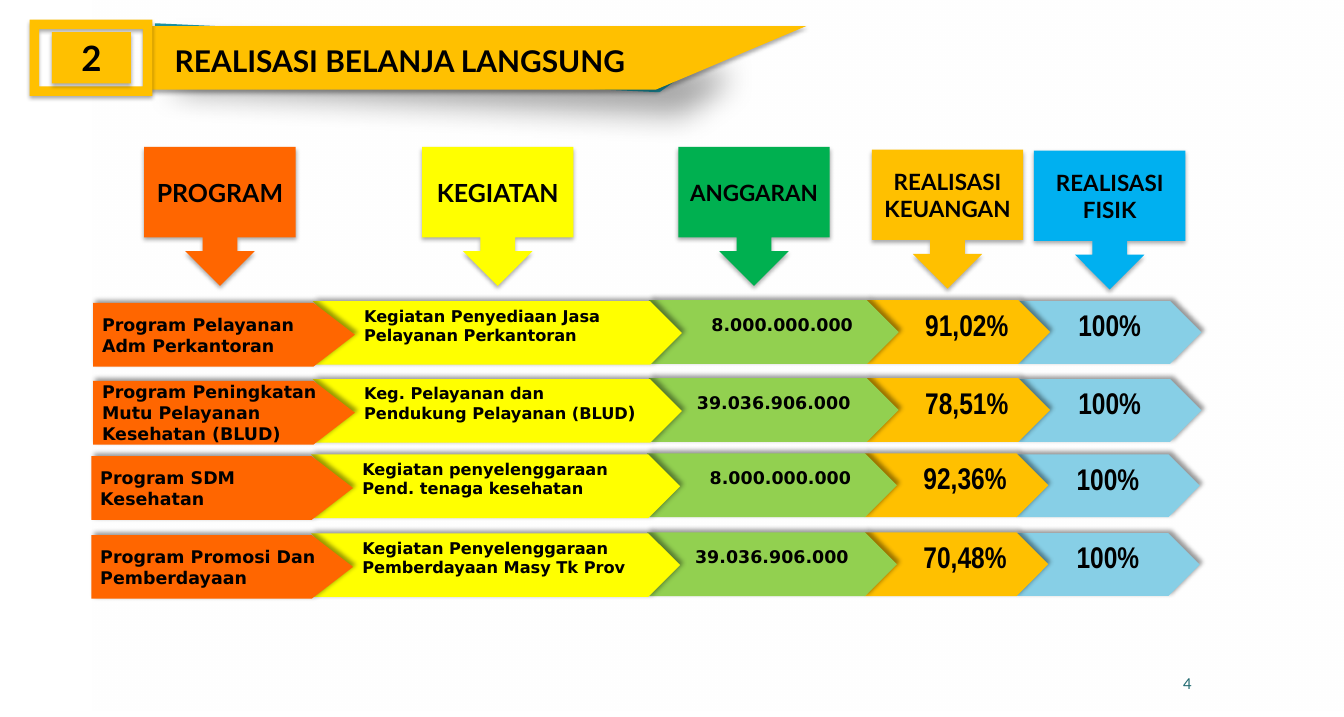
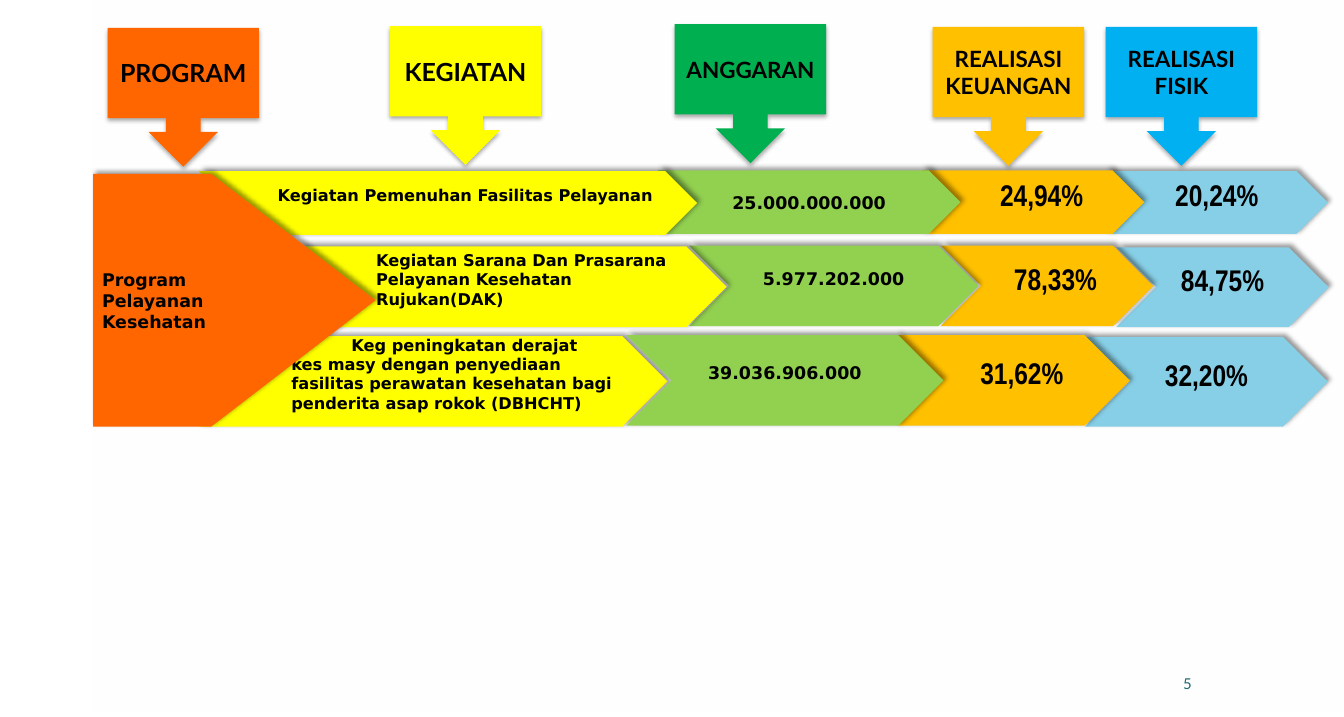
from lxml import etree
from pptx import Presentation, util as u
from pptx.dml.color import RGBColor
from pptx.enum import shapes as sh, text as tx
from pptx.oxml import ns

PX = 9144
HUE = {"orange": "FF6600", "yellow": "FFFF00", "green": "00B050", "lime": "92D050",
       "amber": "FFC000", "blue": "00B0F0", "sky": "87CFE6", "teal": "1B91A1",
       "page": "1F696F", "black": "000000", "white": "FFFFFF"}
FORM = sh.MSO_SHAPE
ALIGN = {"l": tx.PP_ALIGN.LEFT, "c": tx.PP_ALIGN.CENTER, "r": tx.PP_ALIGN.RIGHT}
SOFT = (32, 3.5, 2.2, 90)
EDGE = (40, 4, 3, 315)
DEEP = (35, 25, 25, 45)

KINDS = {"plan": (FORM.PENTAGON, "orange", "DejaVu Sans", 14, "l", 0),
         "task": (FORM.CHEVRON, "yellow", "DejaVu Sans", 13, "l", 12),
         "fund": (FORM.CHEVRON, "lime", "DejaVu Sans", 14, "c", 0),
         "paid": (FORM.CHEVRON, "amber", "Arial Narrow", 24, "c", 19),
         "done": (FORM.CHEVRON, "sky", "Arial Narrow", 24, "c", 0)}
HEADS = [("PROGRAM", "orange", 20), ("KEGIATAN", "yellow", 20), ("ANGGARAN", "green", 18),
         ("REALISASI KEUANGAN", "amber", 18), ("REALISASI FISIK", "blue", 18)]

COLS = {"done": (1034, 205), "paid": (865, 205), "fund": (622, 279),
        "task": (247, 412), "plan": (2, 292)}
ROWS = [
    (102, 335, {"plan": "Program Pelayanan Adm Perkantoran",
                "task": "Kegiatan Penyediaan Jasa Pelayanan Perkantoran",
                "fund": "8.000.000.000", "paid": "91,02%", "done": "100%"},
     {"fund": {"left": 19}}),
    (102, 422, {"plan": "Program Peningkatan Mutu Pelayanan Kesehatan (BLUD)",
                "task": "Keg. Pelayanan dan Pendukung Pelayanan (BLUD",
                "fund": "39.036.906.000", "paid": "78,51%", "done": "100%"},
     {"task": {"tail": ")"}}),
    (100, 506, {"plan": "Program SDM Kesehatan",
                "task": "Kegiatan penyelenggaraan Pend. tenaga kesehatan",
                "fund": "8.000.000.000", "paid": "92,36%", "done": "100%"},
     {"fund": {"left": 19}}),
    (100, 594, {"plan": "Program Promosi Dan Pemberdayaan",
                "task": "Kegiatan Penyelenggaraan Pemberdayaan Masy Tk Prov",
                "fund": "39.036.906.000", "paid": "70,48%", "done": "100%"}, {}),
]
BANDS = [
    (374, 101, [
        ("task", 222, 523, "Keg peningkatan derajat kes masy dengan penyediaan fasilitas "
         "perawatan kesehatan bagi penderita asap rokok (DBHCHT)", {"left": 43, "first": 67}),
        ("done", 1211, 271, "32,20%", {}),
        ("paid", 1001, 260, "31,62%", {}),
        ("fund", 699, 354, "39.036.906.000", {})]),
    (274, 90, [
        ("done", 1246, 237, "84,75%", {}),
        ("paid", 1050, 237, "78,33%", {}),
        ("fund", 769, 323, "5.977.202.000", {}),
        ("task", 334, 477, "Kegiatan Sarana Dan Prasarana Pelayanan Kesehatan Rujukan(DAK)",
         {"left": 31})]),
    (190, 71, [
        ("done", 1234, 248, "20,24%", {}),
        ("paid", 1029, 248, "24,94%", {}),
        ("fund", 734, 338, "25.000.000.000", {"lift": 0}),
        ("task", 222, 556, "Kegiatan Pemenuhan Fasilitas Pelayanan",
         {"left": 38, "align": "c"})]),
]


def rgb(name):
    """Look up a colour."""
    return RGBColor.from_string(HUE[name])


def paint(shape, hue, shade):
    """Give a shape a flat fill, no outline and an outer shadow."""
    shape.fill.solid()
    shape.fill.fore_color.rgb = rgb(hue)
    shape.line.fill.background()
    shape.shadow.inherit = False
    alpha, blur, dist, ang = shade
    fx = shape._element.spPr.find(ns.qn("a:effectLst"))
    out = etree.SubElement(fx, ns.qn("a:outerShdw"), blurRad=str(int(blur * 12700)),
                           dist=str(int(dist * 12700)), dir=str(ang * 60000),
                           algn="ctr", rotWithShape="0")
    tint = etree.SubElement(out, ns.qn("a:srgbClr"), val=HUE["black"])
    etree.SubElement(tint, ns.qn("a:alpha"), val=str(alpha * 1000))


def write(shape, words, font, size, align="c", hue="black", bold=True,
          pad=(10, 5, 10, 5), left=0, first=0, tail=""):
    """Set one paragraph in the middle of a shape."""
    frame = shape.text_frame
    frame.word_wrap = True
    frame.vertical_anchor = tx.MSO_ANCHOR.MIDDLE
    (frame.margin_left, frame.margin_top,
     frame.margin_right, frame.margin_bottom) = [n * PX for n in pad]
    para = frame.paragraphs[0]
    para.alignment = ALIGN[align]
    if left or first:
        props = para._p.get_or_add_pPr()
        props.set("marL", str(left * PX))
        props.set("indent", str(first * PX))
    para.add_run().text = words
    para.font.name, para.font.size, para.font.bold = font, u.Pt(size), bold
    para.font.color.rgb = rgb(hue)
    if tail:
        end = para.add_run()
        end.text = tail
        end.font.size = u.Pt(size + 1)


def block(slide, form, box, hue, shade):
    """Add a painted preset shape."""
    shape = slide.shapes.add_shape(form, *[n * PX for n in box])
    paint(shape, hue, shade)
    return shape


def label(slide, box, words, font, size, **opts):
    """Add a text box."""
    write(slide.shapes.add_textbox(*[n * PX for n in box]), words, font, size, **opts)


def outline(slide, x, y, pts, hue, shade):
    """Add a closed polygon with points relative to x, y."""
    pts = [(x + a, y + b) for a, b in pts]
    pen = slide.shapes.build_freeform(*pts[0], scale=PX)
    pen.add_line_segments(pts[1:], close=True)
    paint(pen.convert_to_shape(), hue, shade)


def chip(slide, kind, box, words, lift=17, align=None, left=None, **opts):
    """Add one pointed cell of a band."""
    form, hue, font, size, side, gap = KINDS[kind]
    shape = block(slide, form, box, hue, EDGE)
    if kind == "plan":
        shape.adjustments[0] = 0.65
        lift = 0
    write(shape, words, font, size, align or side, pad=(10, 5, 10, 5 + lift),
          left=gap if left is None else left, **opts)


def cell(slide, kind, x, y, w, h, words, opts):
    """Place a cell with the offset of its kind inside a band."""
    drop = {"done": 1 + (h > 71), "task": 1, "plan": 3}.get(kind, 0)
    chip(slide, kind, (x, y + drop, w, h - (kind == "done")), words, **opts)


def heads(slide, spots):
    """Add the column callouts at the given corners."""
    for (words, hue, size), (x, y) in zip(HEADS, spots):
        shape = block(slide, FORM.DOWN_ARROW_CALLOUT, (x, y, 169, 155), hue, SOFT)
        write(shape, words, "Lato", size)


def title(slide, x, y, num, words):
    """Add the numbered title ribbon."""
    outline(slide, x, y, [(140, 4), (752, 32), (751, 47), (703, 81), (138, 55)], "teal", DEEP)
    outline(slide, x, y, [(129, 7), (867, 7), (699, 78), (129, 78)], "amber", SOFT)
    block(slide, FORM.FRAME, (x, y, 137, 85), "amber", SOFT)
    write(block(slide, FORM.RECTANGLE, (x + 25, y + 14, 88, 57), "amber", SOFT),
          num, "Lato", 28)
    label(slide, (x + 162, y + 21, 563, 50), words, "Lato", 24, align="l", pad=(0, 5, 10, 5))


def base(deck, num):
    """Start a slide with its pale panel and page number."""
    slide = deck.slides.add_slide(deck.slide_layouts[6])
    panel = slide.shapes.add_shape(FORM.RECTANGLE, 103 * PX, 0, 1397 * PX, 800 * PX)
    panel.shadow.inherit = False
    panel.line.fill.background()
    panel.fill.gradient()
    panel.fill.gradient_angle = 270
    for stop, alpha in zip(panel.fill.gradient_stops, (60, 0)):
        stop.color.rgb = rgb("white")
        tint = stop._gs.find(ns.qn("a:srgbClr"))
        etree.SubElement(tint, ns.qn("a:alpha"), val=str(alpha * 1000))
    label(slide, (991, 741, 350, 43), num, "Lato", 12, align="r", hue="page",
          bold=False, pad=(11, 6, 11, 6))
    return slide


def direct(deck):
    """Build the slide with four programme rows."""
    slide = base(deck, "4")
    title(slide, 33, 22, "2", "REALISASI BELANJA LANGSUNG")
    for x, y, texts, opts in ROWS:
        for kind, (dx, w) in COLS.items():
            cell(slide, kind, x + dx, y, w, 71, texts[kind], opts.get(kind, {}))
    heads(slide, [(161, 164), (471, 164), (757, 164), (973, 167), (1154, 168)])


def health(deck):
    """Build the slide with one programme and three activities."""
    slide = base(deck, "5")
    for y, h, cells in BANDS:
        for kind, x, w, words, opts in cells:
            cell(slide, kind, x, y, w, h, words, opts)
    chip(slide, "plan", (104, 194, 315, 282), "Program Pelayanan Kesehatan")
    heads(slide, [(120, 31), (435, 29), (753, 27), (1041, 30), (1234, 30)])


def main():
    """Build and save the deck."""
    deck = Presentation()
    deck.slide_width, deck.slide_height = 1500 * PX, 800 * PX
    direct(deck)
    health(deck)
    deck.save("out.pptx")


if __name__ == "__main__":
    main()
